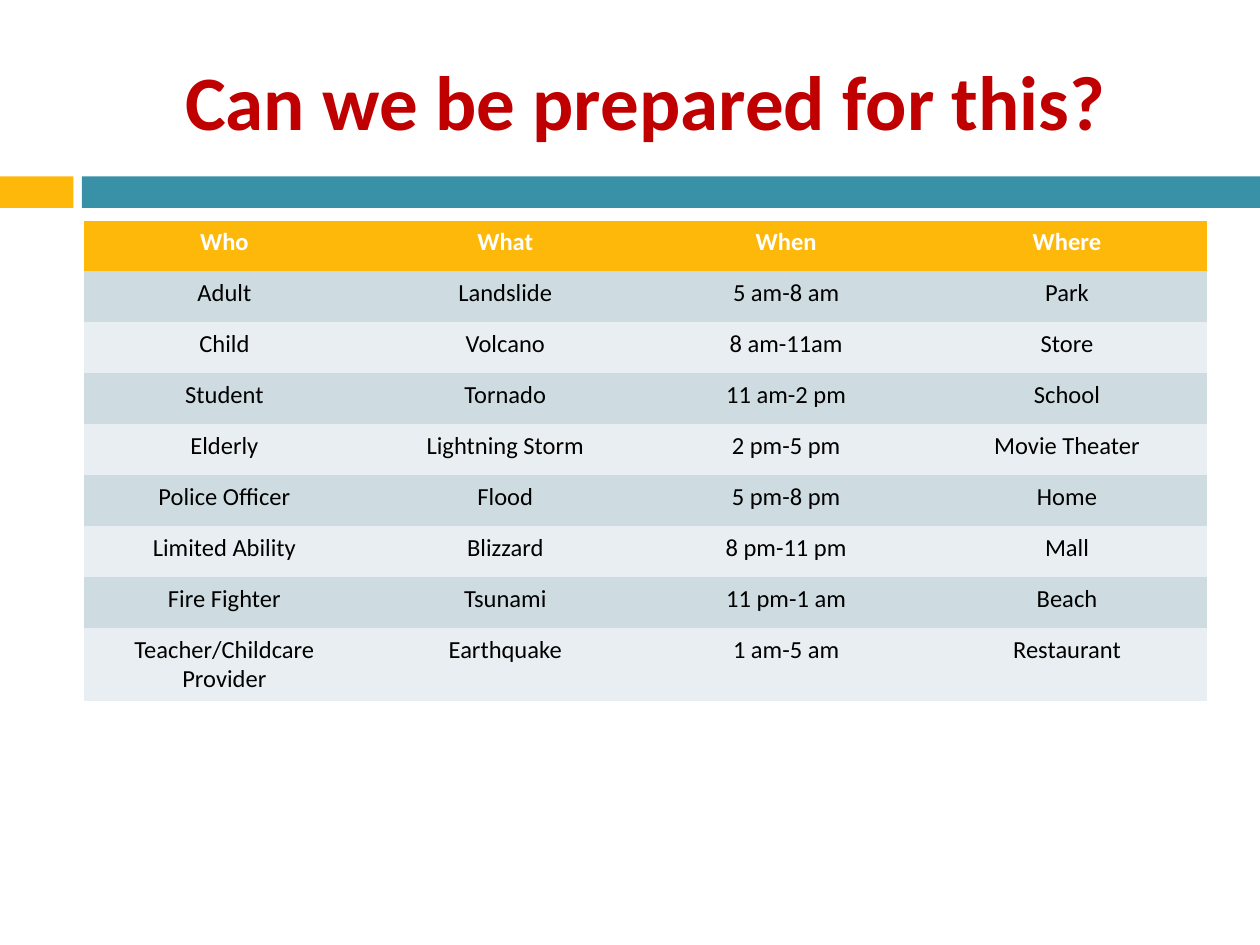
from pptx import Presentation
from pptx import util as u
from pptx.dml.color import RGBColor
from pptx.enum import shapes, text

WHITE = RGBColor(0xFF, 0xFF, 0xFF)
BLACK = RGBColor(0x00, 0x00, 0x00)
RED = RGBColor(0xC0, 0x00, 0x00)
GOLD = RGBColor(0xFE, 0xB8, 0x0A)
TEAL = RGBColor(0x38, 0x91, 0xA7)
DARK_BAND = RGBColor(0xCE, 0xDC, 0xE1)
LIGHT_BAND = RGBColor(0xE8, 0xEE, 0xF1)

COLUMNS, ROWS = 120, 90
TITLE_ONLY = 5
PLAIN_TABLE = "{2D5ABB26-0587-4C30-8999-92F81FD0307C}"

SCENARIOS = [
    ("Who", "What", "When", "Where"),
    ("Adult", "Landslide", "5 am-8 am", "Park"),
    ("Child", "Volcano", "8 am-11am", "Store"),
    ("Student", "Tornado", "11 am-2 pm", "School"),
    ("Elderly", "Lightning Storm", "2 pm-5 pm", "Movie Theater"),
    ("Police Officer", "Flood", "5 pm-8 pm", "Home"),
    ("Limited Ability", "Blizzard", "8 pm-11 pm", "Mall"),
    ("Fire Fighter", "Tsunami", "11 pm-1 am", "Beach"),
    ("Teacher/Childcare Provider", "Earthquake", "1 am-5 am", "Restaurant"),
]


class SlideBuilder:
    font_name = "Calibri"
    title_size = 44
    cell_size = 14

    def __init__(self, deck):
        self.unit_x = deck.slide_width / COLUMNS
        self.unit_y = deck.slide_height / ROWS
        self.page = deck.slides.add_slide(deck.slide_layouts[TITLE_ONLY])

    def area(self, column, row, width, height):
        return (round(column * self.unit_x), round(row * self.unit_y),
                round(width * self.unit_x), round(height * self.unit_y))

    def add_words(self, frame, words, size, color, bold):
        para = frame.paragraphs[0]
        para.alignment = text.PP_ALIGN.CENTER
        span = para.add_run()
        span.text = words
        span.font.name = self.font_name
        span.font.size = u.Pt(size)
        span.font.bold = bold
        span.font.color.rgb = color

    def title(self, words, *place):
        box = self.page.shapes.title
        box.left, box.top, box.width, box.height = self.area(*place)
        box.text_frame.vertical_anchor = text.MSO_ANCHOR.MIDDLE
        self.add_words(box.text_frame, words, self.title_size, RED, True)

    def bar(self, color, *place):
        box = self.page.shapes.add_shape(
            shapes.MSO_SHAPE.RECTANGLE, *self.area(*place))
        box.shadow.inherit = False
        box.fill.solid()
        box.fill.fore_color.rgb = color
        box.line.fill.background()

    def table(self, records, *place):
        frame = self.page.shapes.add_table(
            len(records), len(records[0]), *self.area(*place))
        grid = frame.table
        grid.horz_banding = False
        grid._tbl.tblPr[0].text = PLAIN_TABLE
        for row, record in enumerate(records):
            header = row == 0
            band = DARK_BAND if row % 2 else LIGHT_BAND
            for column, words in enumerate(record):
                cell = grid.cell(row, column)
                cell.fill.solid()
                cell.fill.fore_color.rgb = GOLD if header else band
                self.add_words(cell.text_frame, words, self.cell_size,
                               WHITE if header else BLACK, header)


def main():
    deck = Presentation()
    deck.slide_width, deck.slide_height = u.Inches(10), u.Inches(7.5)
    builder = SlideBuilder(deck)
    builder.bar(GOLD, 0, 16.8, 7, 3)
    builder.bar(TEAL, 7.8, 16.8, COLUMNS - 7.8, 3)
    builder.title("Can we be prepared for this?", 8, 3, 107, 13)
    builder.table(SCENARIOS, 8, 21, 107, 4.86 * len(SCENARIOS))
    deck.save("out.pptx")


if __name__ == "__main__":
    main()
